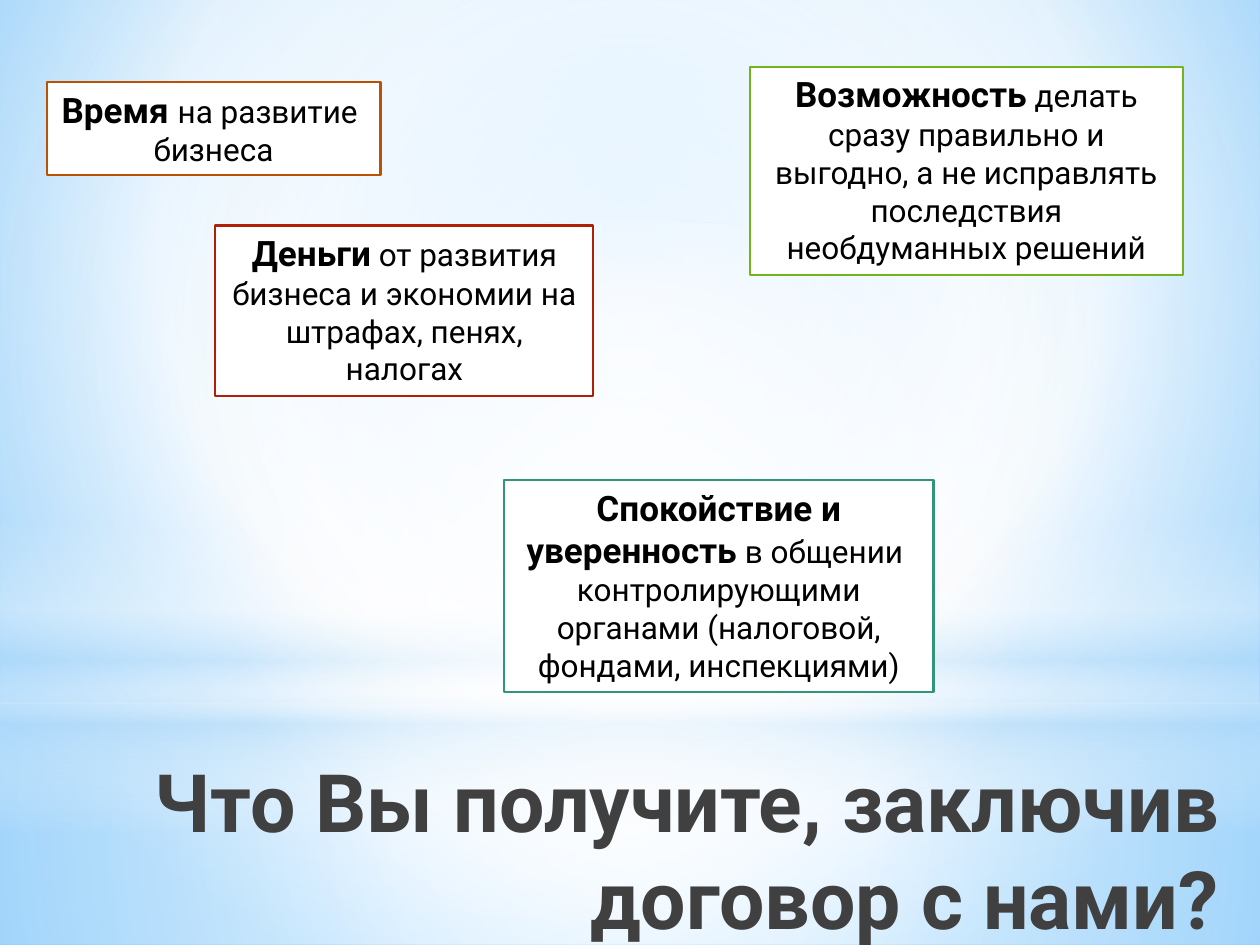
from lxml import etree
from pptx import Presentation
from pptx.dml.color import RGBColor
from pptx.enum.shapes import MSO_SHAPE
from pptx.enum.text import MSO_ANCHOR, MSO_AUTO_SIZE, PP_ALIGN
from pptx.oxml.ns import qn
from pptx.util import Inches, Pt

RECTANGLE, OVAL = MSO_SHAPE.RECTANGLE, MSO_SHAPE.OVAL
CENTER, RIGHT = PP_ALIGN.CENTER, PP_ALIGN.RIGHT
TOP = MSO_ANCHOR.TOP
GROW, FIXED = MSO_AUTO_SIZE.SHAPE_TO_FIT_TEXT, MSO_AUTO_SIZE.NONE

FONT = "Roboto"
COLORS = {
    "white": "FFFFFF", "black": "000000", "title": "404040",
    "sky": "9ED5FF", "blue": "5BB9FF", "haze": "B4DCFA",
    "green": "72B41D", "orange": "BB5203", "red": "B01F07", "teal": "31957A",
}

MIDDLE = (50, 50, 50, 50)
BACKDROP = [(0, "sky", 100), (60, "white", 100), (100, "blue", 100)]
BACKDROP_FOCUS = (20, 10, 20, 60)

GLOWS = [
    (RECTANGLE, (0, 5.58, 10, 1.92), MIDDLE,
     [(0, "white", 91), (37, "white", 76), (100, "haze", 79)]),
    (RECTANGLE, (0, 0, 10, 5.58), MIDDLE,
     [(0, "white", 89), (48, "white", 62), (100, "haze", 79)]),
    (RECTANGLE, (0, 4.12, 10, 2.5), None,
     [(0, "white", 0), (29, "white", 30), (45, "haze", 40),
      (55, "white", 26), (65, "haze", 60), (100, "white", 0)]),
    (OVAL, (0, 1.75, 10, 5.58), MIDDLE,
     [(0, "white", 100), (56, "white", 0)]),
]

TITLE = "Что Вы получите, заключив договор с нами?"
TITLE_PLACE = (0.55, 5.92, 9.22, 1.25)

BENEFITS = [
    ((5.95, 0.53, 3.44, 1.65), "green", "Возможность",
     " делать сразу правильно и выгодно, а не исправлять последствия необдуманных решений"),
    ((0.37, 0.65, 2.65, 0.74), "orange", "Время ", "на развитие  бизнеса"),
    ((1.71, 1.79, 3, 1.35), "red", "Деньги",
     " от развития бизнеса и экономии на штрафах, пенях, налогах"),
    ((4, 3.81, 3.41, 1.68), "teal", "Спокойствие и уверенность",
     " в общении  контролирующими органами (налоговой, фондами, инспекциями)"),
]


def color(name):
    return RGBColor.from_string(COLORS[name])


def set_gradient(fill, owner, stops, focus):
    fill.solid()
    solid = owner.find(qn("a:solidFill"))
    gradient = etree.Element(qn("a:gradFill"), rotWithShape="1")
    stop_list = etree.SubElement(gradient, qn("a:gsLst"))
    for position, name, opacity in stops:
        stop = etree.SubElement(stop_list, qn("a:gs"), pos=str(position * 1000))
        shade = etree.SubElement(stop, qn("a:srgbClr"), val=COLORS[name])
        if opacity < 100:
            etree.SubElement(shade, qn("a:alpha"), val=str(opacity * 1000))
    if focus:
        circle = etree.SubElement(gradient, qn("a:path"), path="circle")
        sides = {side: str(share * 1000) for side, share in zip("ltrb", focus)}
        etree.SubElement(circle, qn("a:fillToRect"), sides)
    else:
        etree.SubElement(gradient, qn("a:lin"), ang="5400000", scaled="0")
    owner.replace(solid, gradient)


def add_plain_shape(page, kind, place):
    shape = page.shapes.add_shape(kind, *map(Inches, place))
    shape.shadow.inherit = False
    return shape


def write_text(box, spans, alignment, auto_size):
    frame = box.text_frame
    frame.word_wrap = True
    frame.auto_size = auto_size
    frame.vertical_anchor = TOP
    para = frame.paragraphs[0]
    para.alignment = alignment
    for text, size, bold, name in spans:
        span = para.add_run()
        span.text = text
        span.font.name = FONT
        span.font.size = Pt(size)
        span.font.bold = bold
        span.font.color.rgb = color(name)


def main():
    deck = Presentation()
    deck.slide_width, deck.slide_height = Inches(10), Inches(7.5)
    page = deck.slides.add_slide(deck.slide_layouts[6])

    backdrop = page.background.fill
    backdrop.solid()
    set_gradient(backdrop, page.element.find(".//" + qn("p:bgPr")),
                 BACKDROP, BACKDROP_FOCUS)

    for kind, place, focus, stops in GLOWS:
        glow = add_plain_shape(page, kind, place)
        glow.line.fill.background()
        set_gradient(glow.fill, glow.element.spPr, stops, focus)

    title = page.shapes.add_textbox(*map(Inches, TITLE_PLACE))
    write_text(title, [(TITLE, 46, True, "title")], RIGHT, FIXED)

    for place, outline, lead, detail in BENEFITS:
        box = add_plain_shape(page, RECTANGLE, place)
        box.fill.solid()
        box.fill.fore_color.rgb = color("white")
        box.line.color.rgb = color(outline)
        box.line.width = Pt(1.25)
        spans = [(lead, 20, True, "black"), (detail, 18, False, "black")]
        write_text(box, spans, CENTER, GROW)

    deck.save("out.pptx")


if __name__ == "__main__":
    main()
